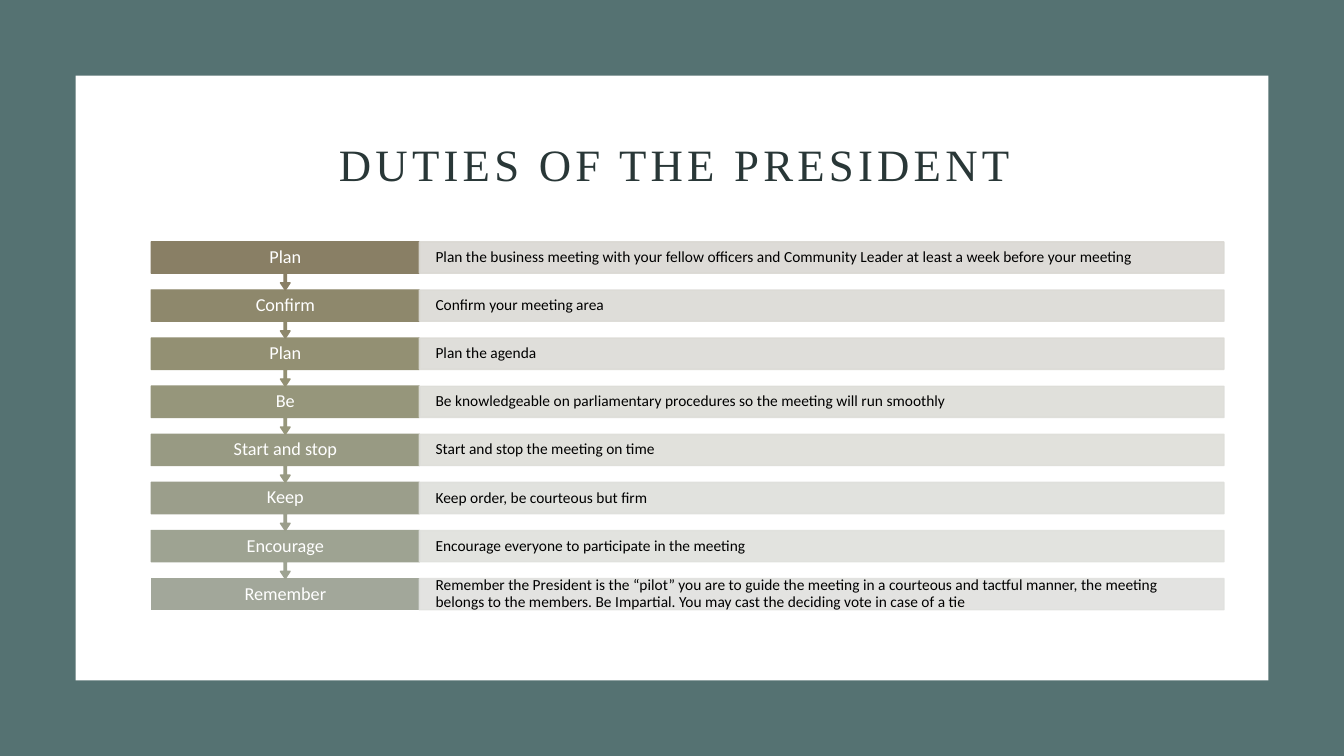
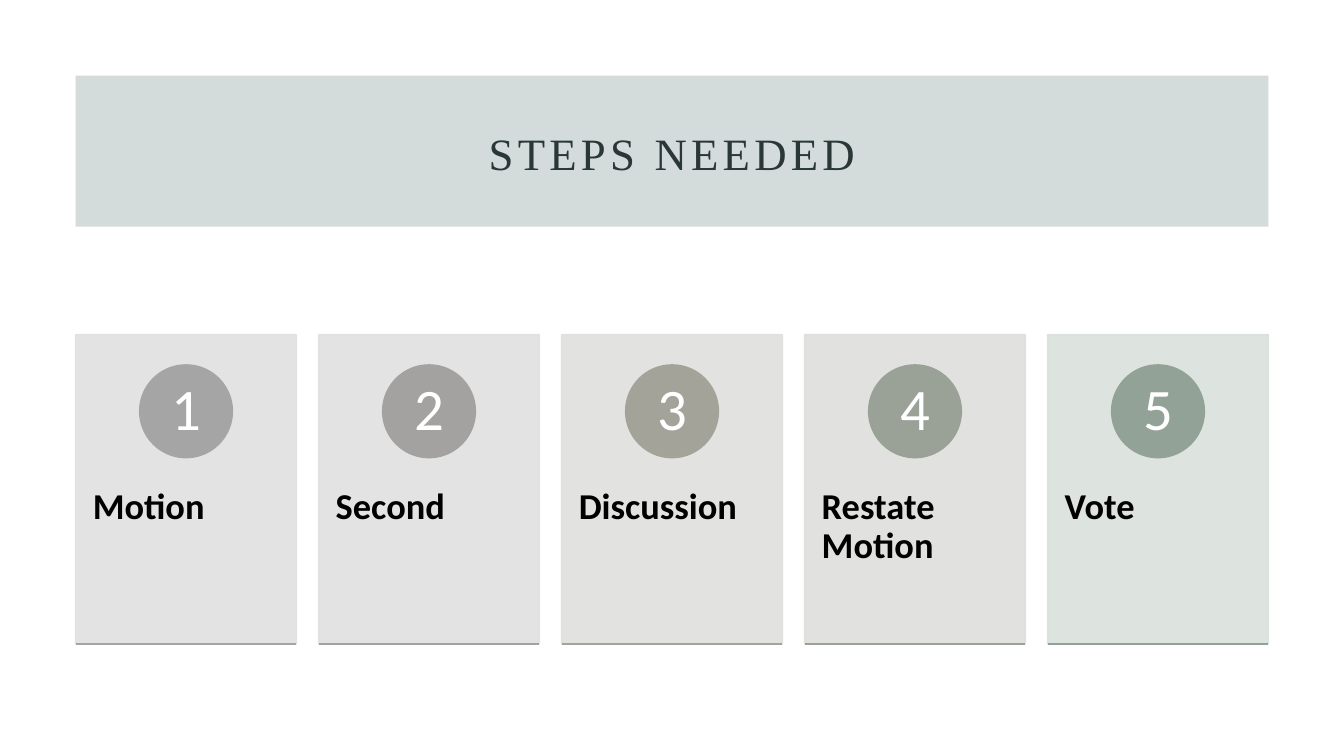
from dataclasses import dataclass

import lxml.etree
import pptx
import pptx.dml.color
import pptx.enum.shapes
import pptx.enum.text
import pptx.oxml
import pptx.oxml.ns
import pptx.util

Inches = pptx.util.Inches
Pt = pptx.util.Pt
Shape = pptx.enum.shapes.MSO_SHAPE
Align = pptx.enum.text.PP_ALIGN
Anchor = pptx.enum.text.MSO_ANCHOR
qn = pptx.oxml.ns.qn


@dataclass(frozen=True)
class Theme:
    teal: str = "557272"
    dark: str = "293737"
    white: str = "FFFFFF"
    black: str = "000000"
    head: str = "Times New Roman"
    body: str = "Calibri"
    title: int = 32
    label: int = 13
    note: int = 11
    card: int = 26
    digit: int = 42
    space: int = 3
    solid: int = 90
    tint: int = 25


THEME = Theme()
WIDE, HIGH, EDGE = 13.33, 7.5, 0.75
INNER = 11.83

DUTIES = [
    ("Plan", "Plan the business meeting with your fellow officers and Community Leader "
     "at least a week before your meeting", "897F65", "DAD8D3"),
    ("Confirm", "Confirm your meeting area", "8E886C", "DBDAD5"),
    ("Plan", "Plan the agenda", "939073", "DCDBD6"),
    ("Be", "Be knowledgeable on parliamentary procedures so the meeting will run smoothly",
     "96967B", "DDDDD8"),
    ("Start and stop", "Start and stop the meeting on time", "989A83", "DEDED9"),
    ("Keep", "Keep order, be courteous but firm", "9B9E8B", "DEDFDB"),
    ("Encourage", "Encourage everyone to participate in the meeting", "9EA392", "DFE0DC"),
    ("Remember", "Remember the President is the “pilot” you are to guide the meeting in a "
     "courteous and tactful manner, the meeting belongs to the members. Be Impartial. "
     "You may cast the deciding vote in case of a tie", "A2A79A", "E0E1DE"),
]

STEPS = [
    ("Motion", "A5A5A5", "E1E1E1"),
    ("Second", "A4A2A0", "E0E0E0"),
    ("Discussion", "A3A399", "DFDFDD"),
    ("Restate Motion", "9AA297", "DEDFDC"),
    ("Vote", "92A297", "DAE0DC"),
]


def tone(code):
    return pptx.dml.color.RGBColor.from_string(code)


def fade(fill, alpha):
    color = fill._xPr.find(qn("a:solidFill"))[0]
    lxml.etree.SubElement(color, qn("a:alpha"), val=str(alpha * 1000))


def write(shape, text, size, color, font=THEME.body, bold=False, align=Align.LEFT,
          anchor=Anchor.MIDDLE, inset=(0, 0, 0, 0), space=0):
    frame = shape.text_frame
    frame.word_wrap = True
    frame.auto_size = pptx.enum.text.MSO_AUTO_SIZE.NONE
    frame.vertical_anchor = anchor
    (frame.margin_left, frame.margin_top,
     frame.margin_right, frame.margin_bottom) = map(Inches, inset)
    para = frame.paragraphs[0]
    para.alignment = align
    para.line_spacing = 0.9
    run = para.add_run()
    run.text = text
    run.font.name = font
    run.font.size = Pt(size)
    run.font.bold = bold
    run.font.color.rgb = tone(color)
    if space:
        run.font._element.set("spc", str(space * 100))


def block(slide, box, color, kind=Shape.RECTANGLE, alpha=100, edged=True):
    shape = slide.shapes.add_shape(kind, *map(Inches, box))
    shape.shadow.inherit = False
    shape.fill.solid()
    shape.fill.fore_color.rgb = tone(color)
    if edged:
        shape.line.color.rgb = tone(color)
        shape.line.width = Pt(1)
    else:
        shape.line.fill.background()
    if alpha < 100:
        fade(shape.fill, alpha)
        if edged:
            fade(shape.line.fill, alpha)
    return shape


def rule(slide, left, top, width, color):
    line = slide.shapes.add_connector(
        pptx.enum.shapes.MSO_CONNECTOR.STRAIGHT,
        *map(Inches, (left, top, left + width, top)))
    line.line.color.rgb = tone(color)
    line.line.width = Pt(1)
    lxml.etree.SubElement(line._element.spPr, qn("a:effectLst"))


def head(slide, text, box):
    title = slide.shapes.title
    title.left, title.top, title.width, title.height = map(Inches, box)
    write(title, text, THEME.title, THEME.dark, font=THEME.head, align=Align.CENTER,
          inset=(0.1, 0.05, 0.1, 0.05), space=THEME.space)
    slide.shapes.element.append(title.element)


def row(slide, top, pitch, duty, last):
    label, note, color, pale = duty
    left, width, height = 1.5, 2.66, 0.31
    if last:
        tag = block(slide, (left, top, width, height), color)
    else:
        tag = block(slide, (left, top, width, pitch), color, Shape.DOWN_ARROW_CALLOUT)
        for index, value in enumerate((0.05, 0.1, 0.15, 0.65)):
            tag.adjustments[index] = value
    write(tag, label, THEME.label, THEME.white, align=Align.CENTER)
    bar = block(slide, (left + width, top, 7.98, height), pale, alpha=THEME.solid)
    write(bar, note, THEME.note, THEME.black, inset=(0.16, 0, 0.16, 0))


def card(slide, left, number, step):
    text, color, pale = step
    top, width, height, size = 3.32, 2.19, 3.07, 0.92
    base = block(slide, (left, top, width, height), pale, alpha=THEME.solid)
    write(base, text, THEME.card, THEME.black, bold=True, anchor=Anchor.TOP,
          inset=(0.17, 1.52, 0.17, 0))
    disc = block(slide, (left + (width - size) / 2, top + 0.3, size, size), color, Shape.OVAL)
    write(disc, str(number), THEME.digit, THEME.white, align=Align.CENTER)
    rule(slide, left, top + height, width, color)


def duties(slide):
    slide.background.fill.solid()
    slide.background.fill.fore_color.rgb = tone(THEME.teal)
    block(slide, (EDGE, EDGE, INNER, HIGH - 2 * EDGE), THEME.white, edged=False)
    head(slide, "DUTIES OF THE PRESIDENT", (1.5, 1.17, 10.38, 0.98))
    first, final = 2.4, 5.74
    end = len(DUTIES) - 1
    pitch = (final - first) / end
    for index in range(end, -1, -1):
        row(slide, first + index * pitch, pitch, DUTIES[index], index == end)


def steps(slide):
    block(slide, (EDGE, EDGE, INNER, 1.5), THEME.teal, alpha=THEME.tint, edged=False)
    head(slide, "STEPS NEEDED", (1.53, 1.04, 10.27, 1.02))
    for index, step in enumerate(STEPS):
        card(slide, EDGE + index * 2.41, index + 1, step)


def main():
    deck = pptx.Presentation()
    deck.slide_width, deck.slide_height = Inches(WIDE), Inches(HIGH)
    for build in (duties, steps):
        build(deck.slides.add_slide(deck.slide_layouts[5]))
    deck.save("out.pptx")


if __name__ == "__main__":
    main()
